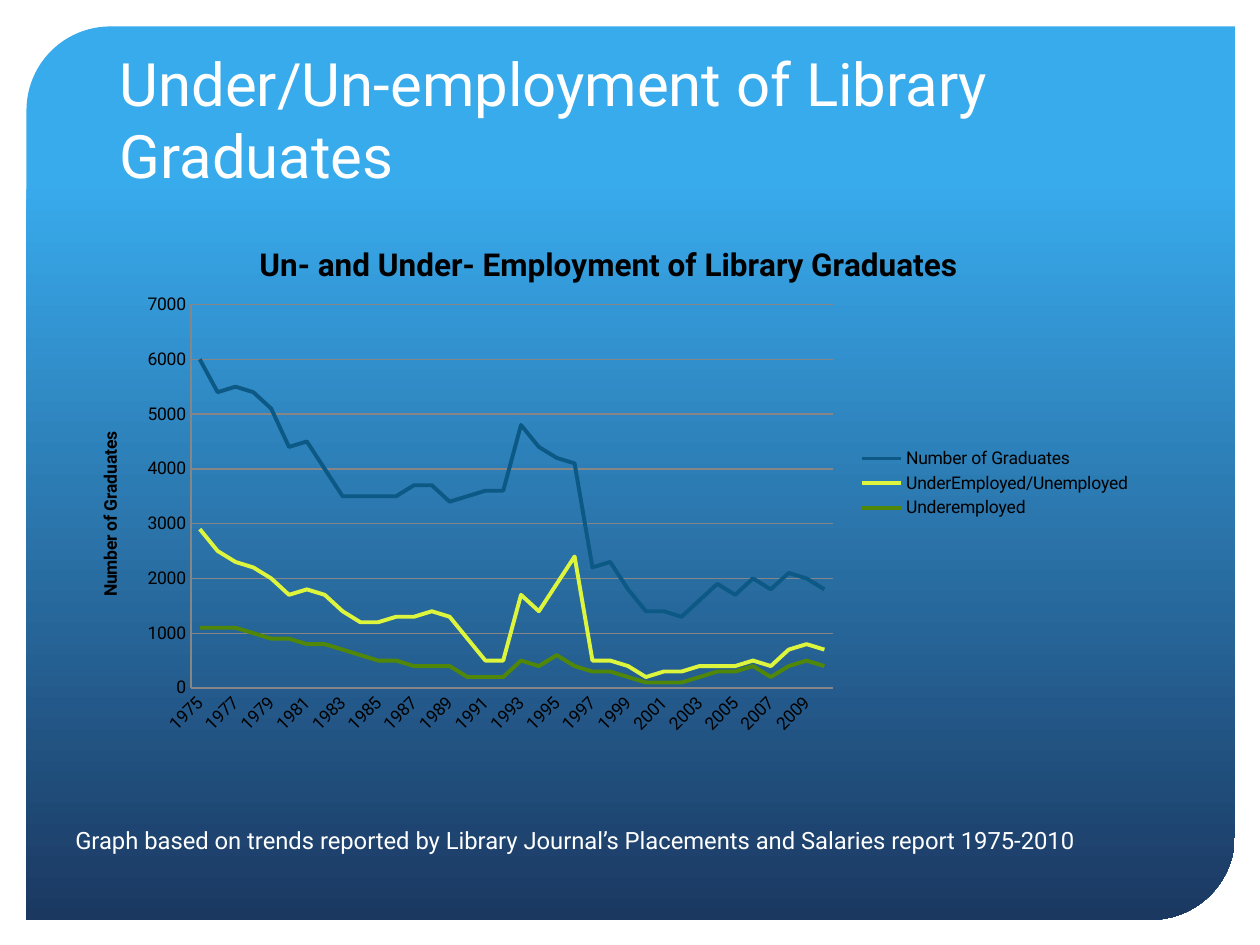
import pptx
import pptx.chart.data
import pptx.dml.color
import pptx.enum.chart
import pptx.enum.shapes
import pptx.enum.text
import pptx.oxml
import pptx.oxml.ns
import pptx.util

Inches, Pt = pptx.util.Inches, pptx.util.Pt
RGB = pptx.dml.color.RGBColor.from_string

# Content
HEADING = "Under/Un-employment of Library Graduates"
SOURCE_NOTE = ("Graph based on trends reported by Library Journal’s "
               "Placements and Salaries report 1975-2010")
CHART_TITLE = "Un- and Under- Employment of Library Graduates"
VALUE_TITLE = "Number of Graduates"
YEARS = range(1975, 2011)
TRENDS = [
    ("Number of Graduates", "0C5986",
     [6000, 5400, 5500, 5400, 5100, 4400, 4500, 4000, 3500, 3500, 3500, 3500,
      3700, 3700, 3400, 3500, 3600, 3600, 4800, 4400, 4200, 4100, 2200, 2300,
      1800, 1400, 1400, 1300, 1600, 1900, 1700, 2000, 1800, 2100, 2000, 1800]),
    ("UnderEmployed/Unemployed", "DDF53D",
     [2900, 2500, 2300, 2200, 2000, 1700, 1800, 1700, 1400, 1200, 1200, 1300,
      1300, 1400, 1300, 900, 500, 500, 1700, 1400, 1900, 2400, 500, 500,
      400, 200, 300, 300, 400, 400, 400, 500, 400, 700, 800, 700]),
    ("Underemployed", "508709",
     [1100, 1100, 1100, 1000, 900, 900, 800, 800, 700, 600, 500, 500,
      400, 400, 400, 200, 200, 200, 500, 400, 600, 400, 300, 300,
      200, 100, 100, 100, 200, 300, 300, 400, 200, 400, 500, 400]),
]

THEME = {
    "font": "Roboto", "text": "FFFFFF", "chart_text": "000000", "grid": "868686",
    "panel": [(0.17, "38ABED"), (1, "1B3861")],
    "heading_size": 34.2, "note_size": 13.6, "chart_title_size": 18, "chart_size": 10,
}

# Places: left, top, width, height in inches
PANEL = (0.21, 0.21, 9.59, 7.09)
HEADING_BOX = (0.85, 0.42, 8.29, 1.14)
NOTE_BOX = (0.5, 6.5, 8.83, 0.45)
CHART_BOX = (0.58, 1.75, 8.5, 4.17)
PLOT_AREA = {"x": 0.11, "y": 0.16, "w": 0.6, "h": 0.73}  # shares of the chart


def apply(target, **values):
    for key, value in values.items():
        setattr(target, key, value)


def place(box):
    return [Inches(length) for length in box]


def style_font(font, size, color, bold=False):
    apply(font, name=THEME["font"], size=Pt(size), bold=bold)
    font.color.rgb = RGB(color)


def style_line(line, color, width):
    line.color.rgb = RGB(color)
    line.width = Pt(width)


def write(shape, text, size, anchor):
    frame = shape.text_frame
    apply(frame, text=text, word_wrap=True, vertical_anchor=anchor,
          auto_size=pptx.enum.text.MSO_AUTO_SIZE.NONE)
    paragraph = frame.paragraphs[0]
    paragraph.alignment = pptx.enum.text.PP_ALIGN.LEFT
    style_font(paragraph.font, size, THEME["text"])


def title_chart_part(part, text, size):
    frame = part.text_frame
    frame.text = text
    style_font(frame.paragraphs[0].font, size, THEME["chart_text"], bold=True)


def set_plot_layout(plot_area):
    ns = pptx.oxml.ns.nsdecls("c")
    modes = "".join(f'<c:{key}Mode val="edge"/>' for key in "xy")
    sizes = "".join(f'<c:{key} val="{share}"/>' for key, share in PLOT_AREA.items())
    layout = pptx.oxml.parse_xml(
        f'<c:layout {ns}><c:manualLayout><c:layoutTarget val="inner"/>'
        f'{modes}{sizes}</c:manualLayout></c:layout>')
    for old in plot_area.findall(pptx.oxml.ns.qn("c:layout")):
        plot_area.remove(old)
    plot_area.insert(0, layout)


def slant_year_labels(plot_area):
    qn = pptx.oxml.ns.qn
    year_axis = plot_area.find(qn("c:catAx"))
    label_body = year_axis.find(qn("c:txPr")).find(qn("a:bodyPr"))
    label_body.set("rot", "-2700000")
    skip = pptx.oxml.parse_xml(
        f'<c:tickLblSkip {pptx.oxml.ns.nsdecls("c")} val="2"/>')
    year_axis.find(qn("c:noMultiLvlLbl")).addprevious(skip)


def add_panel(slide):
    panel = slide.shapes.add_shape(
        pptx.enum.shapes.MSO_SHAPE.ROUND_2_DIAG_RECTANGLE, *place(PANEL))
    panel.shadow.inherit = False
    panel.adjustments[0], panel.adjustments[1] = 0.094, 0
    panel.line.fill.background()
    panel.fill.gradient()
    panel.fill.gradient_angle = 270
    for stop, (position, color) in zip(panel.fill.gradient_stops, THEME["panel"]):
        stop.position = position
        stop.color.rgb = RGB(color)
    slide.shapes.title.element.addprevious(panel.element)


def add_trend_chart(slide):
    enums = pptx.enum.chart
    data = pptx.chart.data.CategoryChartData()
    data.categories = [str(year) for year in YEARS]
    for name, _, values in TRENDS:
        data.add_series(name, values)
    chart = slide.shapes.add_chart(
        enums.XL_CHART_TYPE.LINE, *place(CHART_BOX), data).chart
    style_font(chart.font, THEME["chart_size"], THEME["chart_text"])
    title_chart_part(chart.chart_title, CHART_TITLE, THEME["chart_title_size"])
    chart.has_legend = True
    apply(chart.legend, position=enums.XL_LEGEND_POSITION.RIGHT, include_in_layout=False)
    plot_area = chart.element.find(".//" + pptx.oxml.ns.qn("c:plotArea"))
    set_plot_layout(plot_area)

    # Axes: every second year, slanted
    years, graduates = chart.category_axis, chart.value_axis
    for axis in (years, graduates):
        apply(axis, major_tick_mark=enums.XL_TICK_MARK.NONE,
              minor_tick_mark=enums.XL_TICK_MARK.NONE)
        style_line(axis.format.line, THEME["grid"], 0.75)
        style_font(axis.tick_labels.font, THEME["chart_size"], THEME["chart_text"])
    slant_year_labels(plot_area)
    apply(graduates, minimum_scale=0, maximum_scale=7000, major_unit=1000,
          has_major_gridlines=True)
    style_line(graduates.major_gridlines.format.line, THEME["grid"], 0.75)
    title_chart_part(graduates.axis_title, VALUE_TITLE, THEME["chart_size"])

    # Trend lines
    plot = chart.plots[0]
    plot.vary_by_categories = False
    for series, (_, color, _) in zip(plot.series, TRENDS):
        series.smooth = False
        series.marker.style = enums.XL_MARKER_STYLE.NONE
        style_line(series.format.line, color, 2.25)


def main():
    deck = pptx.Presentation()
    apply(deck, slide_width=Inches(10), slide_height=Inches(7.5))
    slide = deck.slides.add_slide(deck.slide_layouts[5])
    add_panel(slide)

    # Heading and source note
    heading = slide.shapes.title
    left, top, width, height = place(HEADING_BOX)
    apply(heading, left=left, top=top, width=width, height=height)
    anchors = pptx.enum.text.MSO_ANCHOR
    write(heading, HEADING, THEME["heading_size"], anchors.BOTTOM)
    note = slide.shapes.add_textbox(*place(NOTE_BOX))
    write(note, SOURCE_NOTE, THEME["note_size"], anchors.TOP)

    add_trend_chart(slide)
    deck.save("out.pptx")


if __name__ == "__main__":
    main()
